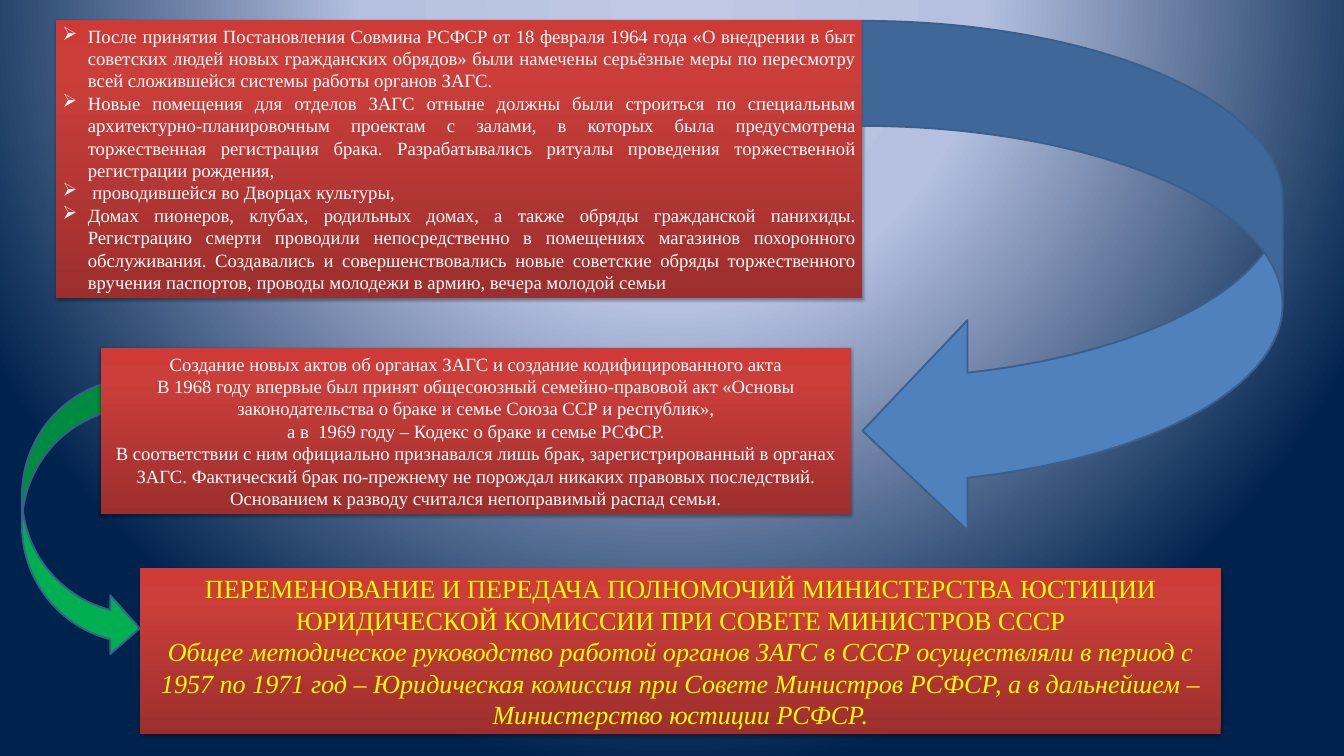
from lxml.etree import SubElement
from pptx import Presentation
from pptx.dml.color import RGBColor
from pptx.enum.shapes import MSO_SHAPE
from pptx.enum.text import MSO_ANCHOR, PP_ALIGN
from pptx.oxml.ns import qn
from pptx.util import Cm, Pt

WHITE = RGBColor(0xFF, 0xFF, 0xFF)
YELLOW = RGBColor(0xFF, 0xFF, 0x00)
GREEN = RGBColor(0x00, 0xB0, 0x50)
BLUE = RGBColor(0x4F, 0x81, 0xBD)
ARROW_EDGE = RGBColor(0x3A, 0x5F, 0x8C)
SHADOW = RGBColor(0x00, 0x00, 0x00)
SKY = [(0, RGBColor(0xBF, 0xC9, 0xE5)), (40, RGBColor(0xB5, 0xC0, 0xE0)), (100, RGBColor(0x00, 0x23, 0x4D))]
RED = [(0, RGBColor(0x9C, 0x2F, 0x2D)), (80, RGBColor(0xCB, 0x3E, 0x3A)), (100, RGBColor(0xCE, 0x3B, 0x37))]


def set_gradient(fill, owner, stops):
    fill.gradient()
    gradient = next(owner.iter(qn("a:gradFill")))
    for child in list(gradient):
        gradient.remove(child)
    stop_list = SubElement(gradient, qn("a:gsLst"))
    for percent, color in stops:
        stop = SubElement(stop_list, qn("a:gs"), pos=str(percent * 1000))
        SubElement(stop, qn("a:srgbClr"), val=str(color))
    return gradient


def add_arrow(kind, frame, color):
    arrow = slide.shapes.add_shape(kind, *map(Cm, frame))
    arrow.shadow.inherit = False
    arrow.fill.solid()
    arrow.fill.fore_color.rgb = color
    arrow.line.color.rgb = ARROW_EDGE
    arrow.line.width = Pt(2)


reform = [
    "После принятия Постановления Совмина РСФСР от 18 февраля 1964 года «О внедрении в быт советских людей новых гражданских обрядов» были намечены серьёзные меры по пересмотру всей сложившейся системы работы органов ЗАГС.",
    "Новые помещения для отделов ЗАГС отныне должны были строиться по специальным архитектурно-планировочным проектам с залами, в которых была предусмотрена торжественная регистрация брака. Разрабатывались ритуалы проведения торжественной регистрации рождения,",
    " проводившейся во Дворцах культуры,",
    "Домах пионеров, клубах, родильных домах, а также обряды гражданской панихиды. Регистрацию смерти проводили непосредственно в помещениях магазинов похоронного обслуживания. Создавались и совершенствовались новые советские обряды торжественного вручения паспортов, проводы молодежи в армию, вечера молодой семьи",
]
family_code = [
    "Создание новых актов об органах ЗАГС и создание кодифицированного акта",
    "В 1968 году впервые был принят общесоюзный семейно-правовой акт «Основы законодательства о браке и семье Союза ССР и республик»,",
    "а в  1969 году – Кодекс о браке и семье РСФСР.",
    "В соответствии с ним официально признавался лишь брак, зарегистрированный в органах ЗАГС. Фактический брак по-прежнему не порождал никаких правовых последствий. Основанием к разводу считался непоправимый распад семьи.",
]
transfer = [
    "ПЕРЕМЕНОВАНИЕ И ПЕРЕДАЧА ПОЛНОМОЧИЙ МИНИСТЕРСТВА ЮСТИЦИИ ЮРИДИЧЕСКОЙ КОМИССИИ ПРИ СОВЕТЕ МИНИСТРОВ СССР",
    "Общее методическое руководство работой органов ЗАГС в СССР осуществляли в период с 1957 по 1971 год – Юридическая комиссия при Совете Министров РСФСР, а в дальнейшем – Министерство юстиции РСФСР.",
]

body_format = {"name": "Times New Roman", "size": Pt(20)}
transfer_format = {"name": "Times New Roman", "size": Pt(28)}
to_family_code = (MSO_SHAPE.CURVED_LEFT_ARROW, (32.6, 0.79, 15.88, 19.47), BLUE)
to_transfer = (MSO_SHAPE.CURVED_RIGHT_ARROW, (0.83, 14.29, 4.45, 10.58), GREEN)
stages = [
    (to_transfer, (2.12, 0.74, 30.48, 10.53), reform, body_format, WHITE, PP_ALIGN.JUSTIFY),
    (to_family_code, (3.81, 13.16, 28.36, 6.26), family_code, body_format, WHITE, PP_ALIGN.CENTER),
    (None, (5.29, 21.49, 40.85, 6.26), transfer, transfer_format, YELLOW, PP_ALIGN.CENTER),
]

prs = Presentation()
prs.slide_width = Cm(50.8)
prs.slide_height = Cm(28.58)
slide = prs.slides.add_slide(prs.slide_layouts[6])

sky = set_gradient(slide.background.fill, slide.element, SKY)
glow = SubElement(sky, qn("a:path"), path="circle")
SubElement(glow, qn("a:fillToRect"), l="50000", t="-80000", r="50000", b="180000")

for arrow_behind, frame, texts, font_format, color, alignment in stages:
    if arrow_behind:
        add_arrow(*arrow_behind)
    panel = slide.shapes.add_shape(MSO_SHAPE.RECTANGLE, *map(Cm, frame))
    red = set_gradient(panel.fill, panel.element, RED)
    SubElement(red, qn("a:lin"), ang="16200000", scaled="0")
    panel.line.fill.background()
    panel.shadow.inherit = False
    effects = panel.element.spPr.find(qn("a:effectLst"))
    shadow = SubElement(effects, qn("a:outerShdw"), blurRad=str(Pt(3.1)), dist=str(Pt(1.8)),
                        dir="5400000", rotWithShape="0")
    shade = SubElement(shadow, qn("a:srgbClr"), val=str(SHADOW))
    SubElement(shade, qn("a:alpha"), val="35000")

    frame_text = panel.text_frame
    frame_text.word_wrap = True
    frame_text.vertical_anchor = MSO_ANCHOR.MIDDLE
    for index, text in enumerate(texts):
        paragraph = frame_text.add_paragraph() if index else frame_text.paragraphs[0]
        paragraph.alignment = alignment
        if texts is reform:
            properties = paragraph._p.get_or_add_pPr()
            properties.set("marL", str(Cm(0.95)))
            properties.set("indent", str(Cm(-0.95)))
            SubElement(properties, qn("a:buChar"), char="➢")
        run = paragraph.add_run()
        run.text = text
        for attribute, value in font_format.items():
            setattr(run.font, attribute, value)
        run.font.color.rgb = color
        if texts is transfer and index:
            run.font.italic = True

prs.save("out.pptx")
